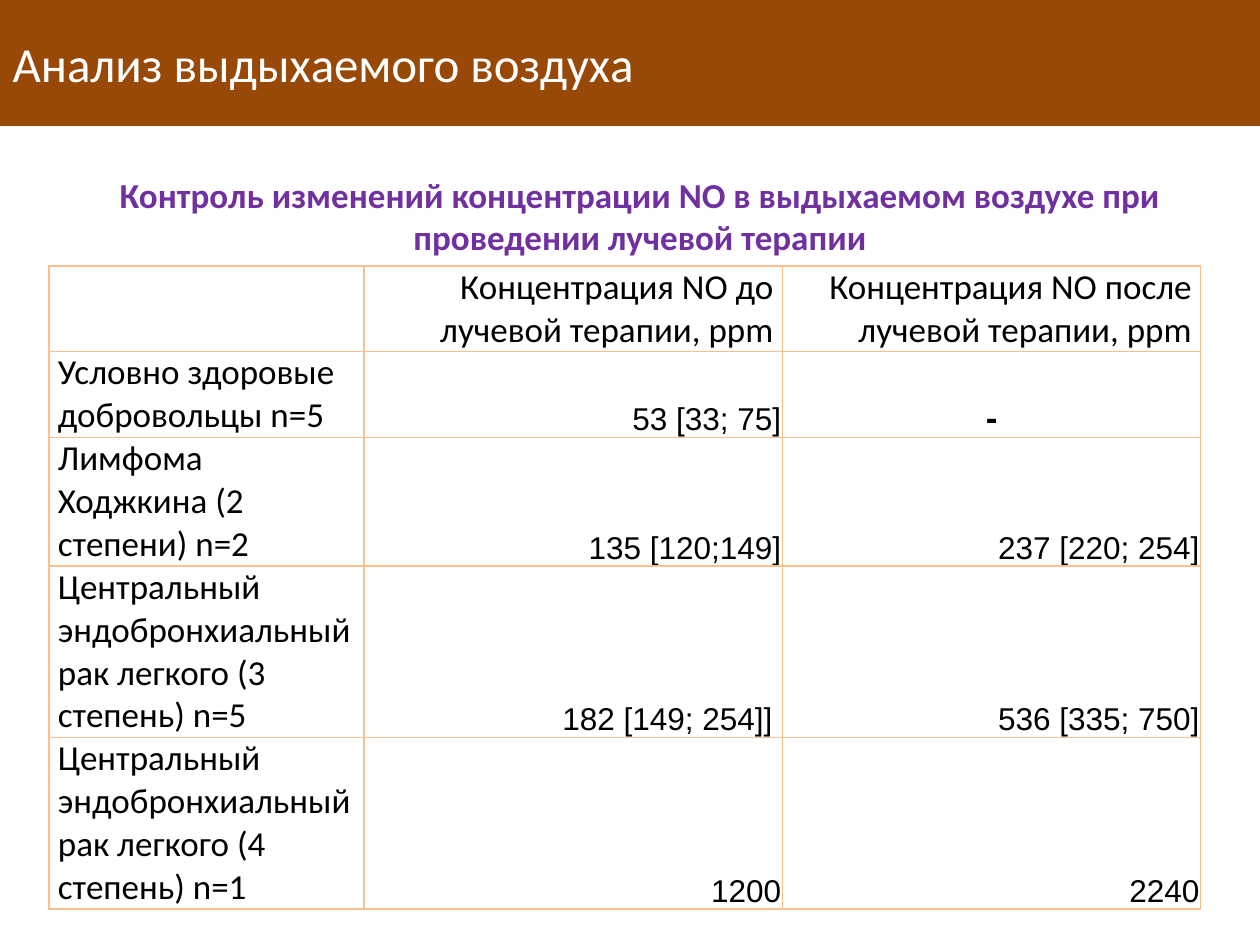
from dataclasses import dataclass

from lxml.etree import SubElement
from pptx import Presentation
from pptx.dml.color import RGBColor
from pptx.enum.text import MSO_ANCHOR as Anchor, MSO_AUTO_SIZE as AutoSize, PP_ALIGN as Align
from pptx.oxml.ns import qn
from pptx.util import Inches, Pt

BORDER_COLOR = "FAC090"
COLUMN_WIDTHS = (2.5, 3.32, 3.32)
ROW_HEIGHTS = (0.67, 0.67, 1, 1.33, 1.33)


@dataclass(frozen=True)
class TextStyle:
    size: int
    font: str = "Calibri"
    color: str = "000000"
    bold: bool = False
    align: Align = Align.LEFT
    anchor: Anchor = Anchor.TOP
    margins: tuple = (0.07, 0, 0.07, 0)


BOX_MARGINS = (0.1, 0.05, 0.1, 0.05)
VALUE_MARGINS = (0.01, 0.01, 0.01, 0)
TITLE = TextStyle(28, color="FFFFFF", anchor=Anchor.MIDDLE, margins=BOX_MARGINS)
CAPTION = TextStyle(20, color="7030A0", bold=True, align=Align.CENTER, margins=BOX_MARGINS)
LABEL = TextStyle(20)
HEADER = TextStyle(20, align=Align.RIGHT)
VALUE = TextStyle(18, "Arial", align=Align.RIGHT, anchor=Anchor.BOTTOM, margins=VALUE_MARGINS)
DASH = TextStyle(20, "Arial", bold=True, align=Align.CENTER, anchor=Anchor.BOTTOM,
                 margins=VALUE_MARGINS)

ROWS = (
    ("", "Концентрация NO до лучевой терапии, ppm", "Концентрация NO после лучевой терапии, ppm"),
    ("Условно здоровые добровольцы n=5", "53 [33; 75]", "-"),
    ("Лимфома Ходжкина (2 степени) n=2", "135 [120;149]", "237 [220; 254]"),
    ("Центральный эндобронхиальный рак легкого (3 степень) n=5", "182 [149; 254]] ", "536 [335; 750]"),
    ("Центральный эндобронхиальный рак легкого (4 степень) n=1", "1200", "2240"),
)


def rgb(color: str) -> RGBColor:
    return RGBColor.from_string(color)


def set_attributes(target, values: dict) -> None:
    for name, value in values.items():
        setattr(target, name, value)


def margin_values(style: TextStyle) -> dict:
    sides = ("left", "top", "right", "bottom")
    return {f"margin_{side}": Inches(margin) for side, margin in zip(sides, style.margins)}


def write_text(text_frame, text: str, style: TextStyle) -> None:
    paragraph = text_frame.paragraphs[0]
    paragraph.alignment = style.align
    run = paragraph.add_run()
    run.text = text
    set_attributes(run.font, {"size": Pt(style.size), "name": style.font, "bold": style.bold})
    run.font.color.rgb = rgb(style.color)


def format_box(shape, box: tuple, text: str, style: TextStyle) -> None:
    left, top, width, height = map(Inches, box)
    set_attributes(shape, {"left": left, "top": top, "width": width, "height": height})
    set_attributes(shape.text_frame, {
        "word_wrap": True, "auto_size": AutoSize.NONE,
        "vertical_anchor": style.anchor, **margin_values(style)})
    write_text(shape.text_frame, text, style)


def add_borders(cell) -> None:
    properties = cell._tc.get_or_add_tcPr()
    for index, side in enumerate(("lnL", "lnR", "lnT", "lnB")):
        line = SubElement(properties, qn(f"a:{side}"), w=str(Pt(1)))
        fill = SubElement(line, qn("a:solidFill"))
        SubElement(fill, qn("a:srgbClr"), val=BORDER_COLOR)
        properties.insert(index, line)


def cell_style(row: int, column: int, text: str) -> TextStyle:
    if column == 0:
        return LABEL
    if row == 0:
        return HEADER
    return DASH if text == "-" else VALUE


def add_results_table(slide) -> None:
    frame = slide.shapes.add_table(len(ROWS), len(COLUMN_WIDTHS), Inches(0.39), Inches(2.11),
                                   Inches(sum(COLUMN_WIDTHS)), Inches(sum(ROW_HEIGHTS)))
    table = frame.table
    set_attributes(table, {"first_row": False, "horz_banding": False})
    for column, width in zip(table.columns, COLUMN_WIDTHS):
        column.width = Inches(width)
    for row, height in zip(table.rows, ROW_HEIGHTS):
        row.height = Inches(height)
    for row_index, texts in enumerate(ROWS):
        for column_index, text in enumerate(texts):
            cell = table.cell(row_index, column_index)
            style = cell_style(row_index, column_index, text)
            set_attributes(cell, {"vertical_anchor": style.anchor, **margin_values(style)})
            cell.fill.background()
            add_borders(cell)
            if text:
                write_text(cell.text_frame, text, style)


def main() -> None:
    presentation = Presentation()
    set_attributes(presentation, {"slide_width": Inches(10), "slide_height": Inches(7.5)})
    slide = presentation.slides.add_slide(presentation.slide_layouts[5])
    title = slide.shapes.title
    title.fill.solid()
    title.fill.fore_color.rgb = rgb("984807")
    format_box(title, (0, 0, 10, 1), "Анализ выдыхаемого воздуха", TITLE)
    caption_box = (0.16, 1.33, 9.84, 0.77)
    caption = slide.shapes.add_textbox(*map(Inches, caption_box))
    format_box(caption, caption_box,
               "Контроль изменений концентрации NO в выдыхаемом воздухе при проведении лучевой терапии",
               CAPTION)
    add_results_table(slide)
    presentation.save("out.pptx")


if __name__ == "__main__":
    main()
